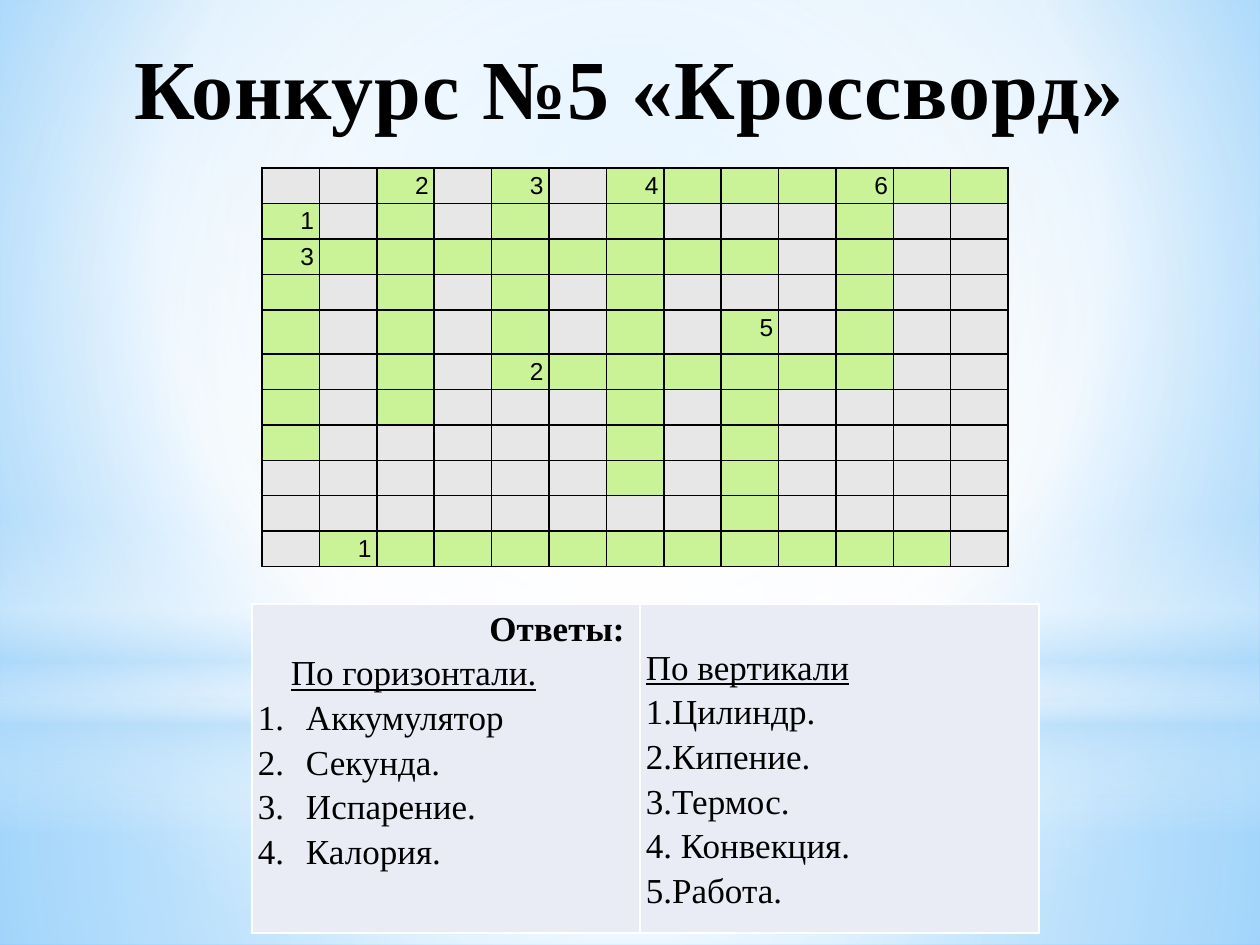
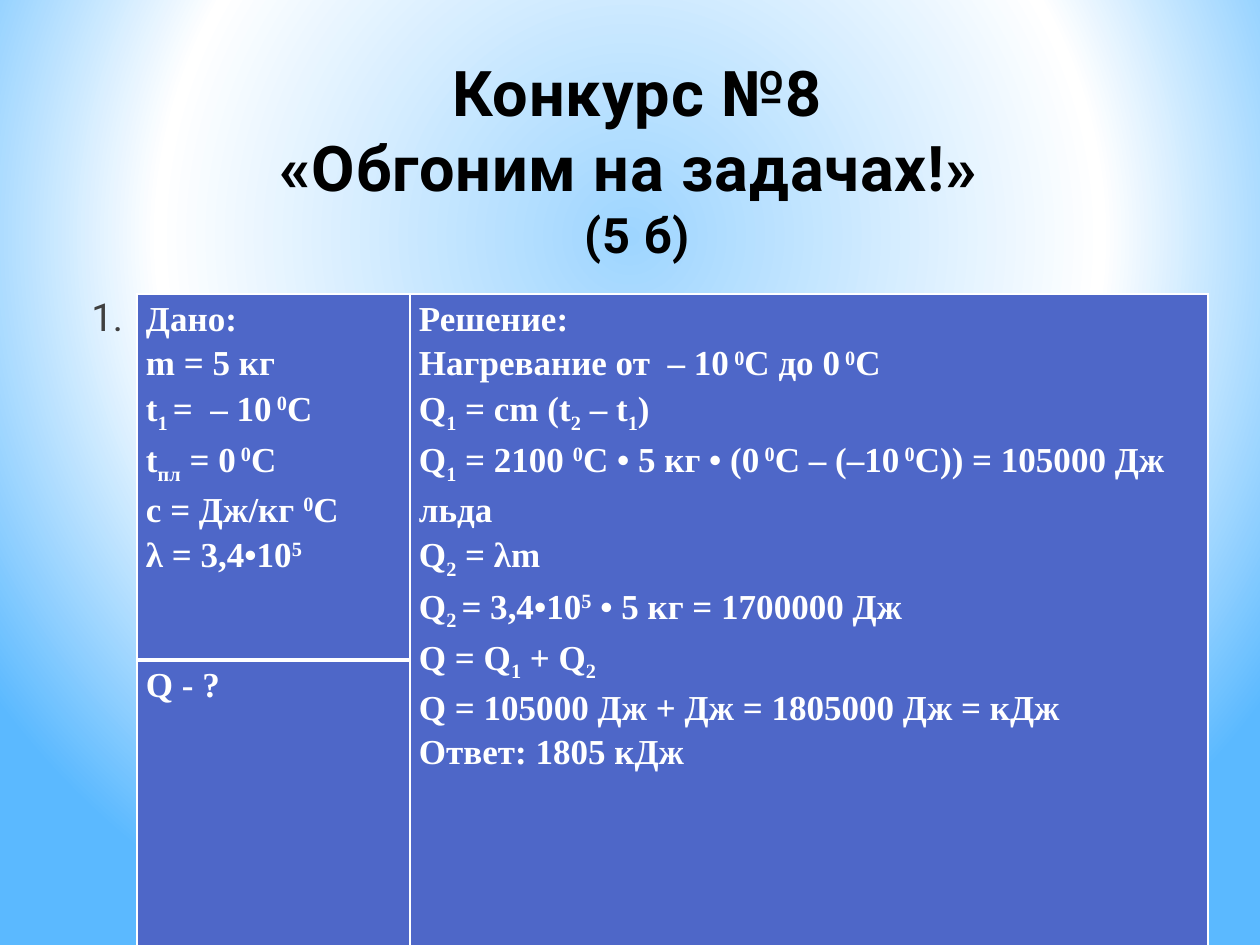
"""Builds two physics contest slides: a crossword with answers and a heat problem."""
from lxml import etree
from pptx import Presentation
from pptx.dml.color import RGBColor
from pptx.enum.shapes import MSO_SHAPE
from pptx.enum.text import MSO_ANCHOR, PP_ALIGN
from pptx.oxml.ns import qn
from pptx.util import Emu, Pt

RECT, OVAL = MSO_SHAPE.RECTANGLE, MSO_SHAPE.OVAL
LEFT, CENTER, JUSTIFY = PP_ALIGN.LEFT, PP_ALIGN.CENTER, PP_ALIGN.JUSTIFY
TOP = MSO_ANCHOR.TOP
SERIF, SANS, PLAIN = "Times New Roman", "Roboto", "Arial"

COLORS = {
    "black": "000000", "white": "FFFFFF", "grey_text": "404040",
    "empty": "E7E7E7", "letter": "CAF297", "answers": "E9EBF5",
    "problem": "4E67C8", "sky": "9ED5FF", "deep_sky": "5BB9FF", "haze": "B4DCFA",
}

BACKGROUND = [(0, "sky", 100), (60, "white", 100), (100, "deep_sky", 100)]
BACKGROUND_FOCUS = (20, 10, 20, 60)
MIDDLE_FOCUS = (50, 50, 50, 50)
GLOWS = [
    (RECT, (0, 703, 1260, 242), [(0, "white", 91), (37, "white", 76), (100, "haze", 79)], MIDDLE_FOCUS),
    (RECT, (0, 0, 1260, 703), [(0, "white", 89), (48, "white", 62), (100, "haze", 79)], MIDDLE_FOCUS),
    (RECT, (0, 519, 1260, 315),
     [(0, "white", 0), (29, "white", 30), (45, "haze", 40), (55, "white", 26),
      (65, "haze", 60), (100, "white", 0)], None),
    (OVAL, (0, 220, 1260, 703), [(0, "white", 100), (56, "white", 0)], MIDDLE_FOCUS),
]

CROSSWORD_TITLE = [("Конкурс №5 «Кроссворд»", {"size": 48})]
CROSSWORD = [
    "..2.3.4###6##",
    "1.#.#.#...#..",
    "3########.#..",
    "#.#.#.#...#..",
    "#.#.#.#.5.#..",
    "#.#.2######..",
    "#.#...#.#....",
    "#.....#.#....",
    "......#.#....",
    "........#....",
    ".1##########.",
]
TALL_ROW = 4

NUMBERED = {"numbered": True}
HANGING = {"numbered": True, "margin": 48, "indent": -48}
ACROSS = [
    ("Ответы:", {"align": CENTER, "indent": 222, "bold": True}),
    ("По горизонтали.", {"indent": 33, "underline": True}),
    ("Аккумулятор", HANGING),
    ("Секунда.", HANGING),
    ("Испарение.", HANGING),
    ("Калория.", HANGING),
]
DOWN = [
    ("По вертикали", {"underline": True}),
    ("Цилиндр.", NUMBERED),
    ("Кипение.", NUMBERED),
    ("Термос.", NUMBERED),
    (" Конвекция.", NUMBERED),
    ("Работа.", NUMBERED),
]

PROBLEM_TITLE = [
    ("Конкурс №8", {}),
    ("«Обгоним на задачах!» ", {}),
    ("(5 б)", {"size": 27.9}),
]
PROBLEM_NUMBER = [("1. ", {})]
GIVEN = [
    "Дано:",
    "m = 5 кг",
    "t|_1 |=  – 10|^ 0|С",
    "t|_пл| = 0|^ 0|С",
    "с = Дж/кг |^0|С",
    "λ = 3,4•10|^5",
]
QUESTION = ["Q - ?"]
SOLUTION = [
    "Решение:",
    "Нагревание от  – 10|^ 0|С до 0|^ 0|С",
    "Q|_1| = cm (t|_2| – t|_1|)",
    "Q|_1| = 2100 |^0|С • 5 кг • (0|^ 0|С – (–10|^ 0|С)) = 105000 Дж",
    "льда",
    "Q|_2| = λm",
    "Q|_2 |= 3,4•10|^5| • 5 кг = 1700000 Дж",
    "Q = Q|_1| + Q|_2",
    "Q = 105000 Дж + Дж = 1805000 Дж = кДж",
    "Ответ: 1805 кДж",
]
BASELINES = {"_": -25000, "^": 30000}

TITLE_STYLE = {"font": SERIF, "color": "black", "bold": True, "align": CENTER, "spacing": 50}
PROBLEM_TITLE_STYLE = {**TITLE_STYLE, "font": SANS, "size": 36}
NUMBER_STYLE = {"font": SANS, "size": 22, "color": "grey_text"}
CLUE_STYLE = {"font": PLAIN, "size": 14, "color": "black", "align": CENTER, "indent": 33, "lines": 1.15}
ANSWER_STYLE = {"font": SERIF, "size": 20, "color": "black", "lines": 1.15}
FORMULA_STYLE = {"font": SERIF, "size": 20, "color": "white", "bold": True, "align": JUSTIFY, "lines": 1.15}


def px(length):
    return Emu(round(length * 914400 / 126))


def rgb(name):
    return RGBColor.from_string(COLORS[name])


def element(parent, tag, **attributes):
    return etree.SubElement(parent, qn(tag), {key: str(value) for key, value in attributes.items()})


def make_gradient(owner, stops, focus):
    solid = owner.find(".//" + qn("a:solidFill"))
    gradient = etree.Element(qn("a:gradFill"), rotWithShape="1")
    stop_list = element(gradient, "a:gsLst")
    for position, color, opacity in stops:
        stop = element(stop_list, "a:gs", pos=position * 1000)
        tint = element(stop, "a:srgbClr", val=COLORS[color])
        if opacity < 100:
            element(tint, "a:alpha", val=opacity * 1000)
    if focus:
        circle = element(gradient, "a:path", path="circle")
        element(circle, "a:fillToRect", **{side: value * 1000 for side, value in zip("ltrb", focus)})
    else:
        element(gradient, "a:lin", ang=5400000, scaled=0)
    solid.getparent().replace(solid, gradient)


def new_slide(deck):
    slide = deck.slides.add_slide(deck.slide_layouts[6])
    slide.background.fill.solid()
    slide.background.fill.fore_color.rgb = rgb("white")
    make_gradient(slide._element, BACKGROUND, BACKGROUND_FOCUS)
    return slide


def add_glow(slide, kind, box, stops, focus):
    glow = slide.shapes.add_shape(kind, *map(px, box))
    glow.shadow.inherit = False
    glow.line.fill.background()
    glow.fill.solid()
    glow.fill.fore_color.rgb = rgb("white")
    make_gradient(glow._element, stops, focus)


def write(frame, lines, base):
    for index, (text, changes) in enumerate(lines):
        style = {**base, **changes}
        paragraph = frame.paragraphs[0] if index == 0 else frame.add_paragraph()
        paragraph.alignment = style.get("align", LEFT)
        paragraph.line_spacing = style.get("lines", 1.0)
        properties = paragraph._p.get_or_add_pPr()
        properties.set("marL", str(px(style.get("margin", 0))))
        properties.set("indent", str(px(style.get("indent", 0))))
        if style.get("numbered"):
            element(properties, "a:buAutoNum", type="arabicPeriod")
        for part in filter(None, text.split("|")):
            run = paragraph.add_run()
            run.text = part.lstrip("_^")
            run.font.name = style["font"]
            run.font.size = Pt(style["size"])
            run.font.bold = style.get("bold", False)
            run.font.underline = style.get("underline", False)
            run.font.color.rgb = rgb(style["color"])
            if part[0] in BASELINES:
                run.font._element.set("baseline", str(BASELINES[part[0]]))
            if "spacing" in style:
                run.font._element.set("spc", str(style["spacing"]))
        if not text:
            paragraph._p.get_or_add_endParaRPr().set("sz", str(style["size"] * 100))


def add_text(slide, box, lines, style, inset_top):
    frame = slide.shapes.add_textbox(*map(px, box)).text_frame
    frame.word_wrap = True
    frame.vertical_anchor = TOP
    frame.margin_top = px(inset_top)
    write(frame, lines, style)


def add_grid(slide, left, top, widths, heights):
    box = (left, top, sum(widths), sum(heights))
    grid = slide.shapes.add_table(len(heights), len(widths), *map(px, box)).table
    grid.first_row = grid.horz_banding = False
    for column, width in zip(grid.columns, widths):
        column.width = px(width)
    for row, height in zip(grid.rows, heights):
        row.height = px(height)
    return grid


def fill_cell(cell, lines, style, fill, border, inset, inset_top=0, thick=""):
    properties = cell._tc.get_or_add_tcPr()
    for side in "LRTB":
        line = element(properties, f"a:ln{side}", w=Pt(3 if side in thick else 1))
        element(element(line, "a:solidFill"), "a:srgbClr", val=COLORS[border])
    cell.fill.solid()
    cell.fill.fore_color.rgb = rgb(fill)
    cell.margin_left = cell.margin_right = px(inset)
    cell.margin_top, cell.margin_bottom = px(inset_top), 0
    write(cell.text_frame, lines, style)


def build_crossword(deck):
    slide = new_slide(deck)
    for glow in GLOWS:
        add_glow(slide, *glow)
    add_text(slide, (73, 21, 1113, 158), CROSSWORD_TITLE, TITLE_STYLE, 15)

    heights = [44 if row == TALL_ROW else 35.5 for row in range(len(CROSSWORD))]
    puzzle = add_grid(slide, 262, 168, [57.4] * len(CROSSWORD[0]), heights)
    for row, squares in enumerate(CROSSWORD):
        for column, square in enumerate(squares):
            clue = square if square.isdigit() else ""
            fill = "empty" if square == "." else "letter"
            fill_cell(puzzle.cell(row, column), [(clue, {})], CLUE_STYLE, fill, "black", 9)

    answers = add_grid(slide, 252, 604, [388, 399], [312])
    for column, (lines, inset_top) in enumerate([(ACROSS, 0), (DOWN, 39)]):
        fill_cell(answers.cell(0, column), lines, ANSWER_STYLE, "answers", "white", 6, inset_top)


def build_problem(deck):
    slide = new_slide(deck)
    add_text(slide, (189, 42, 897, 158), PROBLEM_TITLE, PROBLEM_TITLE_STYLE, 11)
    add_text(slide, (79, 284, 1149, 630), PROBLEM_NUMBER, NUMBER_STYLE, 9)

    problem = add_grid(slide, 137, 294, [273, 798], [366, 285])
    problem.cell(0, 1).merge(problem.cell(1, 1))
    for row, column, formulas, thick in [(0, 0, GIVEN, "B"), (1, 0, QUESTION, "T"), (0, 1, SOLUTION, "")]:
        lines = [(formula, {}) for formula in formulas]
        fill_cell(problem.cell(row, column), lines, FORMULA_STYLE, "problem", "white", 9, thick=thick)


def main():
    deck = Presentation()
    deck.slide_width, deck.slide_height = px(1260), px(945)
    build_crossword(deck)
    build_problem(deck)
    deck.save("out.pptx")


if __name__ == "__main__":
    main()
